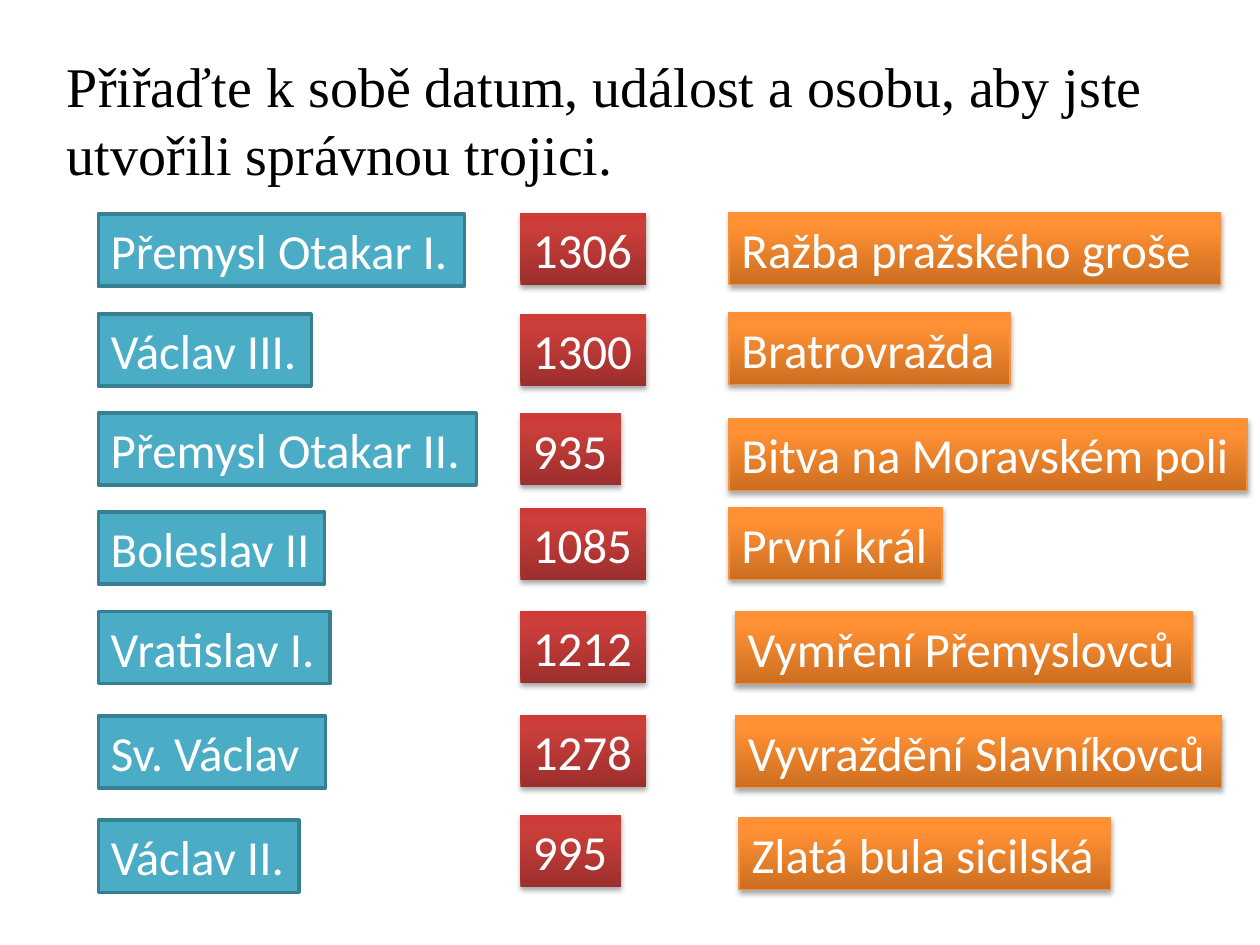
"""Build a slide for matching Czech rulers, dates and events."""
from copy import deepcopy

from lxml.etree import SubElement
from pptx import Presentation
from pptx.dml.color import RGBColor
from pptx.enum.shapes import MSO_SHAPE
from pptx.enum.text import MSO_ANCHOR, MSO_AUTO_SIZE, PP_ALIGN
from pptx.oxml.ns import qn
from pptx.util import Pt

WHITE = RGBColor(0xFF, 0xFF, 0xFF)
BLACK = RGBColor(0x00, 0x00, 0x00)
TEAL = RGBColor(0x4B, 0xAC, 0xC6)
TEAL_EDGE = RGBColor(0x37, 0x7F, 0x92)
REDS = (RGBColor(0x9C, 0x2F, 0x2D), RGBColor(0xCB, 0x3E, 0x3A), RGBColor(0xCE, 0x3B, 0x37))
GOLDS = (RGBColor(0xCC, 0x6E, 0x20), RGBColor(0xFF, 0x90, 0x34), RGBColor(0xFF, 0x91, 0x36))
GOLD_EDGE = RGBColor(0xF6, 0x92, 0x40)

TITLE = "Přiřaďte k sobě datum, událost a osobu, aby jste utvořili správnou trojici."
RULERS = [
    ("Přemysl Otakar I.", 122.4, 209.2),
    ("Václav III.", 179.3, 121.7),
    ("Přemysl Otakar II.", 236, 216),
    ("Boleslav II", 292.5, 129.2),
    ("Vratislav I.", 349.4, 132.5),
    ("Sv. Václav", 409, 129.8),
    ("Václav II.", 468.7, 114.6),
]
DATES = [
    ("1306", 121.7, 72),
    ("1300", 179.3, 72),
    ("935", 236.2, 57.6),
    ("1085", 290.2, 72),
    ("1212", 349.2, 72),
    ("1278", 408.5, 72),
    ("995", 465.8, 57.6),
]
EVENTS = [
    ("Ražba pražského groše", 416.6, 121.4, 281),
    ("Bratrovražda", 416.6, 178.6, 160.6),
    ("Bitva na Moravském poli", 416.6, 239, 296),
    ("První král", 416.6, 290, 121.7),
    ("Vymření Přemyslovců", 420.2, 349.6, 261),
    ("Vyvraždění Slavníkovců", 420.2, 408.8, 278),
    ("Zlatá bula sicilská", 422.4, 467.2, 212.2),
]


class Board:
    """Hold the card style and the current slide."""

    high = 41.2
    size = 28
    font = "Calibri"

    def __init__(self, deck):
        self.slide = deck.slides.add_slide(deck.slide_layouts[5])

    def label(self, frame, text, font, size, color):
        frame.word_wrap = True
        frame.auto_size = MSO_AUTO_SIZE.NONE
        para = frame.paragraphs[0]
        para.alignment = PP_ALIGN.LEFT
        run = para.add_run()
        run.text = text
        run.font.name = font
        run.font.size = Pt(size)
        run.font.color.rgb = color
        return para

    def title(self, text, left, top, width, height):
        box = self.slide.shapes.title
        box.left, box.top, box.width, box.height = map(Pt, (left, top, width, height))
        box.text_frame.vertical_anchor = MSO_ANCHOR.TOP
        para = self.label(box.text_frame, text, "Times New Roman", 32, BLACK)
        para.line_spacing = Pt(39)

    def card(self, text, left, top, width):
        card = self.slide.shapes.add_shape(
            MSO_SHAPE.RECTANGLE, Pt(left), Pt(top), Pt(width), Pt(self.high))
        card.shadow.inherit = False
        card.text_frame.margin_right = 0
        self.label(card.text_frame, text, self.font, self.size, WHITE)
        return card

    def edge(self, card, color, width):
        card.line.color.rgb = color
        card.line.width = Pt(width)

    def flat(self, text, left, top, width):
        card = self.card(text, left, top, width)
        card.fill.solid()
        card.fill.fore_color.rgb = TEAL
        self.edge(card, TEAL_EDGE, 2)

    def glow(self, text, left, top, width, colors, edge=None):
        card = self.card(text, left, top, width)
        self.blend(card, colors)
        self.shade(card)
        if edge is None:
            card.line.fill.background()
        else:
            self.edge(card, edge, 0.75)

    def blend(self, card, colors):
        card.fill.gradient()
        card.fill.gradient_angle = 90
        stops = card._element.spPr.find(".//" + qn("a:gsLst"))
        stops.append(deepcopy(stops[-1]))
        for stop, place, color in zip(card.fill.gradient_stops, (0, 0.8, 1), colors):
            stop.position = place
            stop.color.rgb = color

    def shade(self, card):
        group = card._element.spPr.find(qn("a:effectLst"))
        shade = SubElement(group, qn("a:outerShdw"), blurRad=str(Pt(3.1)),
                           dist=str(Pt(1.8)), dir="5400000", rotWithShape="0")
        color = SubElement(shade, qn("a:srgbClr"), val=str(BLACK))
        SubElement(color, qn("a:alpha"), val="35000")


def main():
    deck = Presentation()
    deck.slide_width, deck.slide_height = Pt(720), Pt(540)
    board = Board(deck)
    board.title(TITLE, 31, 25.2, 653, 85)
    for text, top, width in RULERS:
        board.flat(text, 56.2, top, width)
    for text, top, width in DATES:
        board.glow(text, 297.4, top, width, REDS)
    for text, left, top, width in EVENTS:
        board.glow(text, left, top, width, GOLDS, GOLD_EDGE)
    deck.save("out.pptx")


if __name__ == "__main__":
    main()
